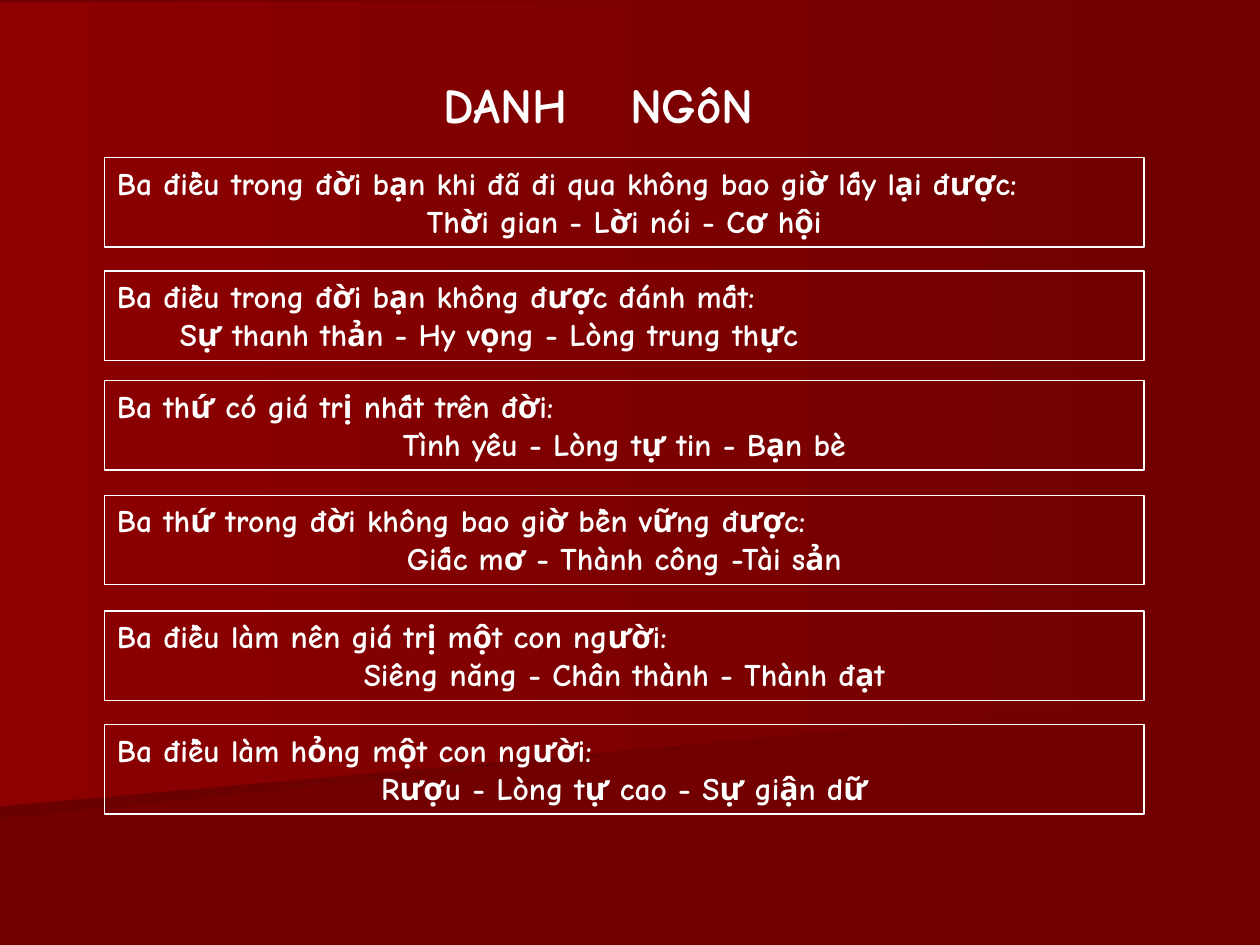
from lxml import etree
from pptx import Presentation
from pptx.dml.color import RGBColor
from pptx.enum.shapes import MSO_SHAPE as Shape
from pptx.enum.text import MSO_ANCHOR as Anchor, MSO_AUTO_SIZE as Fit, PP_ALIGN as Align
from pptx.oxml.ns import qn
from pptx.util import Inches, Pt

WHITE = RGBColor(0xFF, 0xFF, 0xFF)
BASE = RGBColor(0x72, 0x00, 0x00)
DARK = RGBColor(0x6A, 0x00, 0x00)
BRIGHT = RGBColor(0x8C, 0x00, 0x00)

FONT = {"name": "Comic Neue", "bold": True}
FRAME = {"word_wrap": True, "vertical_anchor": Anchor.TOP, "auto_size": Fit.SHAPE_TO_FIT_TEXT}

PANELS = [
    (DARK, [(8.95, 5.57), (0, 6.5), (0, 4.67), (8.95, 2.5)]),
    (BRIGHT, [(9.22, 5.57), (0, 6.4), (0, 0.02), (9.25, 0)]),
]

QUOTES = [
    (1.25, "Ba điều trong đời bạn khi đã đi qua không bao giờ lấy lại được:",
     "Thời gian - Lời nói - Cơ hội"),
    (2.15, "Ba điều trong đời bạn không được đánh mất:",
     "\tSự thanh thản - Hy vọng - Lòng trung thực"),
    (3.02, "Ba thứ có giá trị nhất trên đời:",
     "Tình yêu - Lòng tự tin - Bạn bè"),
    (3.93, "Ba thứ trong đời không bao giờ bền vững được:",
     "Giấc mơ - Thành công -Tài sản"),
    (4.85, "Ba điều làm nên giá trị một con người:",
     "Siêng năng - Chân thành - Thành đạt"),
    (5.75, "Ba điều làm hỏng một con người:",
     "Rượu - Lòng tự cao - Sự giận dữ"),
]


def style(item, values):
    for key, value in values.items():
        setattr(item, key, value)


def write(para, text, size, align):
    run = para.add_run()
    run.text = text
    style(run.font, {**FONT, "size": Pt(size)})
    run.font.color.rgb = WHITE
    para.alignment = align


prs = Presentation()
style(prs, {"slide_width": Inches(10), "slide_height": Inches(7.5)})
slide = prs.slides.add_slide(prs.slide_layouts[5])
shapes = slide.shapes
slide.background.fill.solid()
slide.background.fill.fore_color.rgb = BASE

# Gradient panels, moved behind the title
for rank, (color, points) in enumerate(PANELS):
    start, *rest = [(Inches(x), Inches(y)) for x, y in points]
    form = shapes.build_freeform(*start)
    form.add_line_segments(rest, close=True)
    panel = form.convert_to_shape()
    panel.shadow.inherit = False
    panel.line.fill.background()
    panel.fill.gradient()
    panel.fill.gradient_angle = 0
    for stop, tone in zip(panel.fill.gradient_stops, (color, BASE)):
        stop.color.rgb = tone
    shapes._spTree.insert(2 + rank, panel._element)

# Title, with a tab stop between its two words
title = shapes.title
style(title, {"left": Inches(3.42), "top": Inches(0.54),
              "width": Inches(2.81), "height": Inches(0.57)})
style(title.text_frame, {**FRAME, "auto_size": Fit.NONE})
head = title.text_frame.paragraphs[0]
write(head, "DANH\tNGôN", 28, Align.LEFT)
tabs = etree.SubElement(head._p.get_or_add_pPr(), qn("a:tabLst"))
etree.SubElement(tabs, qn("a:tab"), pos=str(Inches(1.48)), algn="l")

# Framed quotes
for top, lead, answer in QUOTES:
    box = shapes.add_shape(Shape.RECTANGLE, Inches(0.83), Inches(top), Inches(8.25), Inches(0.71))
    box.shadow.inherit = False
    box.fill.background()
    box.line.color.rgb = WHITE
    box.line.width = Pt(0.75)
    frame = box.text_frame
    style(frame, FRAME)
    write(frame.paragraphs[0], lead, 18, Align.LEFT)
    align = Align.LEFT if answer.startswith("\t") else Align.CENTER
    write(frame.add_paragraph(), answer, 18, align)

prs.save("out.pptx")
